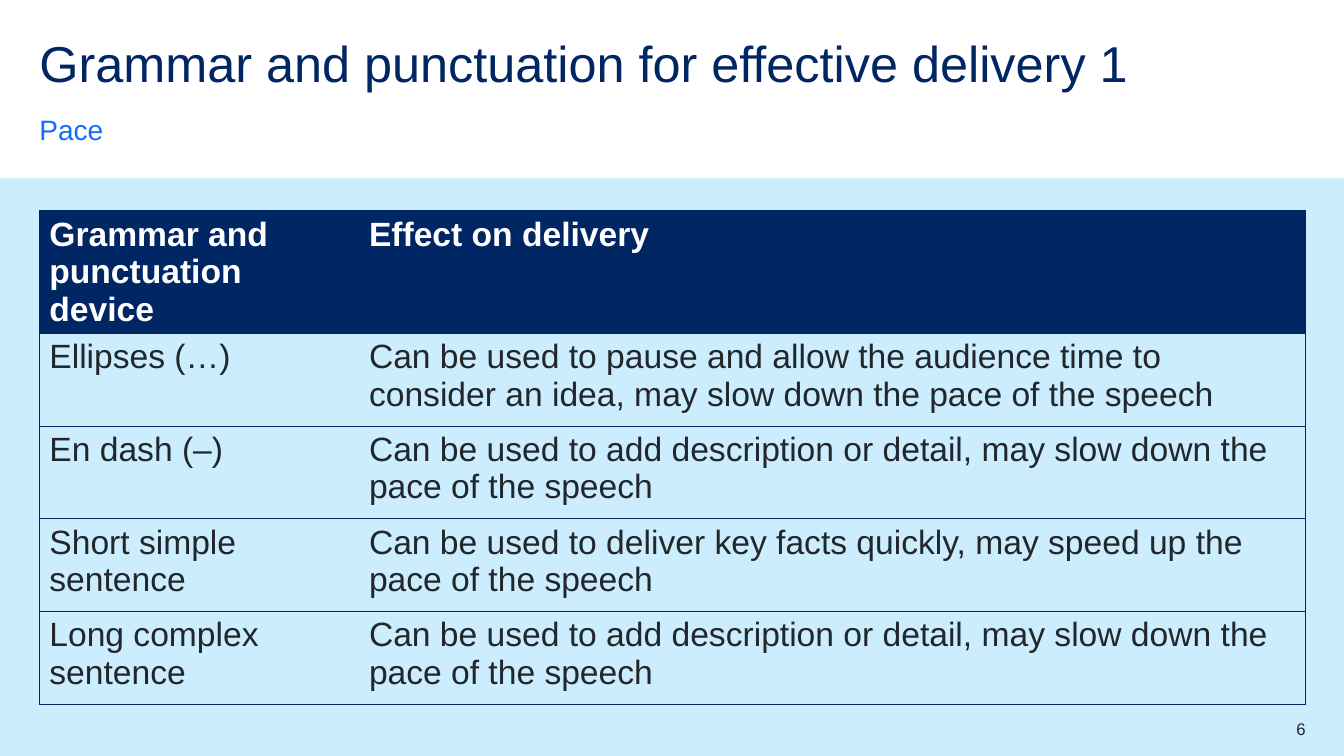
from dataclasses import dataclass

from lxml import etree
from pptx import Presentation
from pptx import util as u
from pptx.dml.color import RGBColor
from pptx.enum import shapes, text
from pptx.oxml import ns

TITLE = "Grammar and punctuation for effective delivery 1"
TOPIC = "Pace"
PAGE = "6"
DEVICES = [
    ("Grammar and punctuation device", "Effect on delivery"),
    ("Ellipses (…)",
     "Can be used to pause and allow the audience time to consider an idea, "
     "may slow down the pace of the speech"),
    ("En dash (–)",
     "Can be used to add description or detail, may slow down the pace of the speech"),
    ("Short simple sentence",
     "Can be used to deliver key facts quickly, may speed up the pace of the speech"),
    ("Long complex sentence",
     "Can be used to add description or detail, may slow down the pace of the speech"),
]


@dataclass(frozen=True)
class Theme:
    font: str = "Arial"
    navy: str = "002664"
    blue: str = "146CFD"
    pale: str = "CBEDFD"
    ink: str = "22272B"
    white: str = "FFFFFF"
    title_size: int = 36
    topic_size: int = 20
    table_size: int = 24
    page_size: int = 12
    rule: float = 0.5


THEME = Theme()
WIDTH, HEIGHT = 13.33, 7.5
MARGIN = 0.39
BAND_TOP = 1.77
TABLE_TOP = 2.09
ROW_HEIGHT = 0.92
COLUMNS = (3.17, 9.39)
RIGHT = MARGIN + sum(COLUMNS)
PAGE_WIDTH = 0.79
NO_STYLE = "{2D5ABB26-0587-4C30-8999-92F81FD0307C}"


def box(left, top, width, height):
    return [u.Inches(length) for length in (left, top, width, height)]


def write(frame, wording, size, color, bold=False):
    paragraph = frame.paragraphs[0]
    run = paragraph.add_run()
    run.text = wording
    run.font.name = THEME.font
    run.font.size = u.Pt(size)
    run.font.bold = bold
    run.font.color.rgb = RGBColor.from_string(color)
    return paragraph


def clear_insets(frame, anchor):
    frame.word_wrap = True
    frame.auto_size = text.MSO_AUTO_SIZE.NONE
    frame.vertical_anchor = anchor
    frame.margin_left = frame.margin_right = frame.margin_top = frame.margin_bottom = 0


def add_label(slide, place, wording, size, color, anchor):
    frame = slide.shapes.add_textbox(*box(*place)).text_frame
    clear_insets(frame, anchor)
    return write(frame, wording, size, color)


def rule_cell(cell, sides):
    """Draw thin navy borders on the given sides, in the order L, R, T, B."""
    properties = cell._tc.get_or_add_tcPr()
    for side in sides:
        line = etree.SubElement(properties, ns.qn(f"a:ln{side}"), w=str(u.Pt(THEME.rule)))
        fill = etree.SubElement(line, ns.qn("a:solidFill"))
        etree.SubElement(fill, ns.qn("a:srgbClr"), val=THEME.navy)


def add_device_table(slide):
    place = box(MARGIN, TABLE_TOP, sum(COLUMNS), ROW_HEIGHT * len(DEVICES))
    table = slide.shapes.add_table(len(DEVICES), len(COLUMNS), *place).table
    table.horz_banding = False
    table._tbl.tblPr.find(ns.qn("a:tableStyleId")).text = NO_STYLE
    for column, width in zip(table.columns, COLUMNS):
        column.width = u.Inches(width)
    for r, device in enumerate(DEVICES):
        header = r == 0
        for c, wording in enumerate(device):
            cell = table.cell(r, c)
            rule_cell(cell, ("L" if c == 0 else "R") + "TB")
            if header:
                cell.fill.solid()
                cell.fill.fore_color.rgb = RGBColor.from_string(THEME.navy)
            else:
                cell.fill.background()
            write(cell.text_frame, wording, THEME.table_size,
                  THEME.white if header else THEME.ink, header)


def main():
    deck = Presentation()
    deck.slide_width, deck.slide_height = u.Inches(WIDTH), u.Inches(HEIGHT)
    slide = deck.slides.add_slide(deck.slide_layouts.get_by_name("Title Only"))

    band = slide.shapes.add_shape(shapes.MSO_SHAPE.RECTANGLE,
                                  *box(0, BAND_TOP, WIDTH, HEIGHT - BAND_TOP))
    band.shadow.inherit = False
    band.fill.solid()
    band.fill.fore_color.rgb = RGBColor.from_string(THEME.pale)
    band.line.fill.background()

    title = slide.shapes.title
    title.left, title.top, title.width, title.height = box(MARGIN, MARGIN, 11.22, 0.57)
    clear_insets(title.text_frame, text.MSO_ANCHOR.TOP)
    heading = write(title.text_frame, TITLE, THEME.title_size, THEME.navy)
    heading.alignment = text.PP_ALIGN.LEFT
    heading.line_spacing = 0.9

    topic = add_label(slide, (MARGIN, 1.11, 11.02, 0.34), TOPIC,
                      THEME.topic_size, THEME.blue, text.MSO_ANCHOR.BOTTOM)
    topic.line_spacing = 1.5
    topic.space_after = u.Pt(12)

    add_device_table(slide)

    page = add_label(slide, (RIGHT - PAGE_WIDTH, 7.13, PAGE_WIDTH, 0.2), PAGE,
                     THEME.page_size, THEME.ink, text.MSO_ANCHOR.TOP)
    page.alignment = text.PP_ALIGN.RIGHT

    deck.save("out.pptx")


if __name__ == "__main__":
    main()
